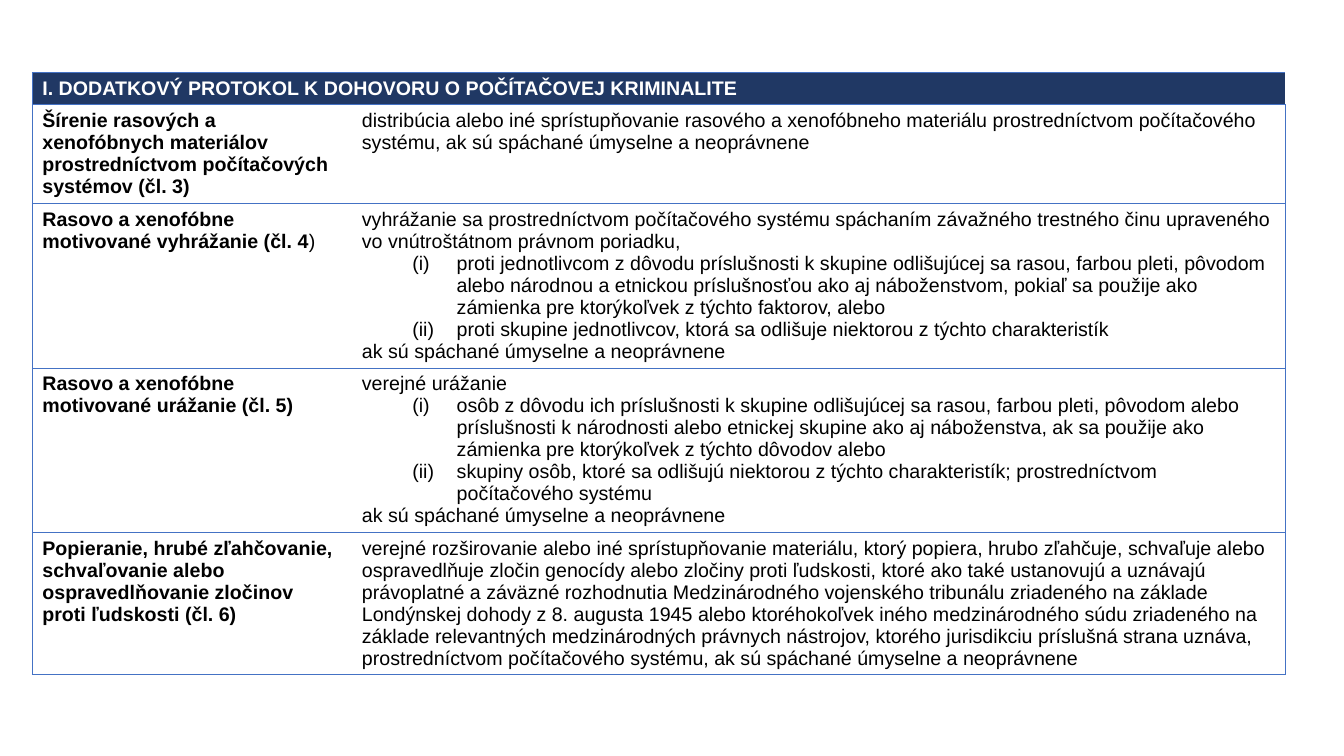
from lxml.etree import SubElement
from pptx import Presentation
from pptx.dml.color import RGBColor
from pptx.oxml.ns import qn
from pptx.util import Inches, Pt

NAVY = RGBColor(0x20, 0x38, 0x64)
BLUE = RGBColor(0x44, 0x72, 0xC4)
WHITE = RGBColor(0xFF, 0xFF, 0xFF)
BLACK = RGBColor(0x00, 0x00, 0x00)
PLAIN_TABLE_STYLE = "{2D5ABB26-0587-4C30-8999-92F81FD0307C}"
HEADING = "I. DODATKOVÝ PROTOKOL K DOHOVORU O POČÍTAČOVEJ KRIMINALITE"
CLOSING = "ak sú spáchané úmyselne a neoprávnene"

# Each offence: row height, bold label, regular label ending, (numbered, text) paragraphs
offences = [
    (0.98, "Šírenie rasových a xenofóbnych materiálov prostredníctvom počítačových systémov (čl. 3)", "", [
        (False, "distribúcia alebo iné sprístupňovanie rasového a xenofóbneho materiálu "
                "prostredníctvom počítačového systému, ak sú spáchané úmyselne a neoprávnene"),
    ]),
    (1.63, "Rasovo a xenofóbne motivované vyhrážanie (čl. 4", ")", [
        (False, "vyhrážanie sa prostredníctvom počítačového systému spáchaním závažného "
                "trestného činu upraveného vo vnútroštátnom právnom poriadku,"),
        (True, "proti jednotlivcom z dôvodu príslušnosti k skupine odlišujúcej sa rasou, farbou pleti, "
               "pôvodom alebo národnou a etnickou príslušnosťou ako aj náboženstvom, pokiaľ sa použije "
               "ako zámienka pre ktorýkoľvek z týchto faktorov, alebo"),
        (True, "proti skupine jednotlivcov, ktorá sa odlišuje niektorou z týchto charakteristík"),
        (False, CLOSING),
    ]),
    (1.63, "Rasovo a xenofóbne motivované urážanie (čl. 5)", "", [
        (False, "verejné urážanie"),
        (True, "osôb z dôvodu ich príslušnosti k skupine odlišujúcej sa rasou, farbou pleti, pôvodom "
               "alebo príslušnosti k národnosti alebo etnickej skupine ako aj náboženstva, ak sa použije "
               "ako zámienka pre ktorýkoľvek z týchto dôvodov alebo"),
        (True, "skupiny osôb, ktoré sa odlišujú niektorou z týchto charakteristík; "
               "prostredníctvom počítačového systému"),
        (False, CLOSING),
    ]),
    (1.41, "Popieranie, hrubé zľahčovanie, schvaľovanie alebo ospravedlňovanie zločinov "
           "proti ľudskosti (čl. 6)", "", [
        (False, "verejné rozširovanie alebo iné sprístupňovanie materiálu, ktorý popiera, hrubo zľahčuje, "
                "schvaľuje alebo ospravedlňuje zločin genocídy alebo zločiny proti ľudskosti, ktoré ako také "
                "ustanovujú a uznávajú právoplatné a záväzné rozhodnutia Medzinárodného vojenského tribunálu "
                "zriadeného na základe Londýnskej dohody z 8. augusta 1945 alebo ktoréhokoľvek iného "
                "medzinárodného súdu zriadeného na základe relevantných medzinárodných právnych nástrojov, "
                "ktorého jurisdikciu príslušná strana uznáva, prostredníctvom počítačového systému, "
                "ak sú spáchané úmyselne a neoprávnene"),
    ]),
]


def add_text(paragraph, text, bold=False, color=BLACK, numbered=False):
    if numbered:
        properties = paragraph._p.get_or_add_pPr()
        properties.set("marL", str(Inches(0.94)))
        properties.set("indent", str(Inches(-0.44)))
        paragraph.level = 1
        SubElement(properties, qn("a:buFont"), typeface="+mj-lt")
        SubElement(properties, qn("a:buAutoNum"), type="romanLcParenBoth")
    run = paragraph.add_run()
    run.text = text
    run.font.name = "Arial"
    run.font.size = Pt(14)
    run.font.bold = bold
    run.font.color.rgb = color


def add_borders(cell, sides):
    properties = cell._tc.get_or_add_tcPr()
    for side in sides:
        line = SubElement(properties, qn(f"a:ln{side}"), w=str(Pt(0.5)))
        fill = SubElement(line, qn("a:solidFill"))
        SubElement(fill, qn("a:srgbClr"), val=str(BLUE))


presentation = Presentation()
presentation.slide_width = Inches(13.33)
presentation.slide_height = Inches(7.5)
slide = presentation.slides.add_slide(presentation.slide_layouts[6])

heights = [0.32] + [offence[0] for offence in offences]
table = slide.shapes.add_table(len(heights), 2, Inches(0.32), Inches(0.72),
                               Inches(12.43), Inches(sum(heights))).table
table._tbl.tblPr.find(qn("a:tableStyleId")).text = PLAIN_TABLE_STYLE
table.first_row = False
table.horz_banding = False
for column, width in zip(table.columns, (3.17, 9.26)):
    column.width = Inches(width)
for row, height in zip(table.rows, heights):
    row.height = Inches(height)
    for cell, sides in zip(row.cells, ("LTB", "RTB")):
        add_borders(cell, sides)
        cell.fill.background()

heading = table.cell(0, 0)
heading.merge(table.cell(0, 1))
add_borders(heading, "")
heading.fill.solid()
heading.fill.fore_color.rgb = NAVY
add_text(heading.text_frame.paragraphs[0], HEADING, bold=True, color=WHITE)

for index, (height, label, ending, lines) in enumerate(offences, 1):
    label_paragraph = table.cell(index, 0).text_frame.paragraphs[0]
    add_text(label_paragraph, label, bold=True)
    if ending:
        add_text(label_paragraph, ending)
    frame = table.cell(index, 1).text_frame
    for position, (numbered, text) in enumerate(lines):
        paragraph = frame.add_paragraph() if position else frame.paragraphs[0]
        add_text(paragraph, text, numbered=numbered)

presentation.save("out.pptx")
